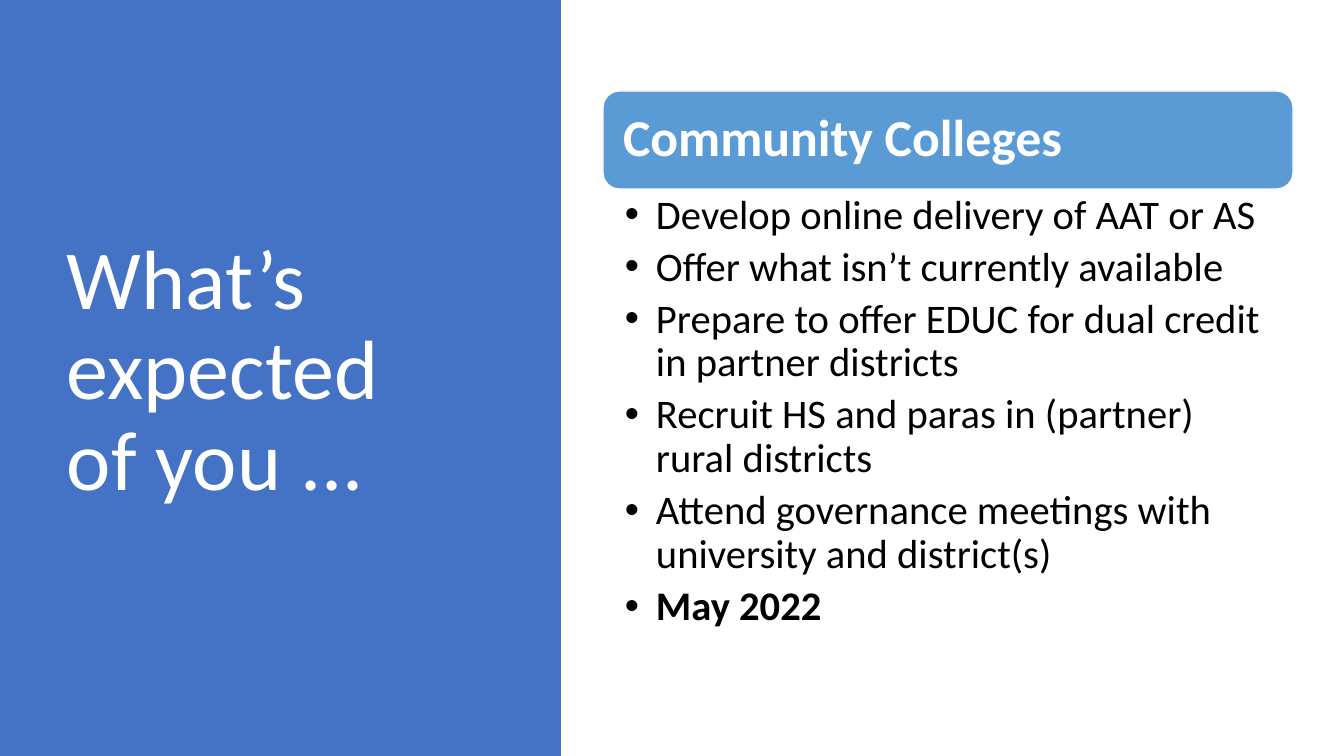
from lxml.etree import SubElement as Sub
from pptx import Presentation
from pptx.dml.color import RGBColor as Rgb
from pptx.enum.shapes import MSO_SHAPE as Kind
from pptx.enum.text import MSO_ANCHOR as Anchor
from pptx.oxml.ns import qn
from pptx.util import Emu, Pt

# Content
TITLE = "What’s expected of you ..."
HEAD = "Community Colleges"
TASKS = [
    "Develop online delivery of AAT or AS",
    "Offer what isn’t currently available",
    "Prepare to offer EDUC for dual credit in partner districts",
    "Recruit HS and paras in (partner) rural districts",
    "Attend governance meetings with university and district(s)",
]
DATE = "May 2022"

# Look
HUES = {"panel": "4472C4", "bar": "5B9BD5", "white": "FFFFFF", "black": "000000"}
FONTS = {
    "title": {"size": Pt(60), "name": "Calibri", "bold": False},
    "head": {"size": Pt(37), "name": "Calibri", "bold": True},
    "task": {"size": Pt(29), "name": "Calibri", "bold": False},
    "date": {"size": Pt(29), "name": "Calibri", "bold": True},
}

# Layout in px
WIDE, HIGH = 1344, 756
PANEL = (0, 0, 561, HIGH)
NAME = (57, 69, 419, 607)
LEFT, TOP, SPAN, BAR, LIST = 603, 91, 690, 98, 465
EDGE, HANG = 5, 31


def px(n):
    return Emu(round(n * 914400 / 100.8))


def hue(key):
    return Rgb.from_string(HUES[key])


def block(kind, box, fill, line=None):
    shape = slide.shapes.add_shape(kind, *map(px, box))
    shape.shadow.inherit = False
    shape.fill.solid()
    shape.fill.fore_color.rgb = hue(fill)
    if line:
        shape.line.color.rgb = hue(line)
        shape.line.width = Pt(1)
    else:
        shape.line.fill.background()


def write(box, rows, color, pads, anchor, after=0, bullet=False):
    frame = slide.shapes.add_textbox(*map(px, box)).text_frame
    frame.word_wrap = True
    frame.vertical_anchor = anchor
    for side, pad in zip(("left", "top", "right", "bottom"), pads):
        setattr(frame, f"margin_{side}", px(pad))
    for i, (text, style) in enumerate(rows):
        para = frame.add_paragraph() if i else frame.paragraphs[0]
        para.line_spacing = 0.9
        para.space_after = Pt(after)
        run = para.add_run()
        run.text = text
        for key, value in FONTS[style].items():
            setattr(run.font, key, value)
        run.font.color.rgb = hue(color)
        if bullet:
            props = para._p.get_or_add_pPr()
            props.set("marL", str(px(HANG)))
            props.set("indent", str(-px(HANG)))
            Sub(props, qn("a:buFont"), typeface="Arial")
            Sub(props, qn("a:buChar"), char="•")


deck = Presentation()
deck.slide_width, deck.slide_height = px(WIDE), px(HIGH)
slide = deck.slides.add_slide(deck.slide_layouts[6])

# Title panel
block(Kind.RECTANGLE, PANEL, "panel")
write(NAME, [(TITLE, "title")], "white", (10, 5, 10, 5), Anchor.MIDDLE)

# Heading bar
block(Kind.ROUNDED_RECTANGLE, (LEFT, TOP, SPAN, BAR), "bar", "white")
inner = (LEFT + EDGE, TOP + EDGE, SPAN - 2 * EDGE, BAR - 2 * EDGE)
write(inner, [(HEAD, "head")], "white", (15, 15, 15, 15), Anchor.MIDDLE)

# Task list
rows = [(task, "task") for task in TASKS] + [(DATE, "date")]
write((LEFT, TOP + BAR, SPAN, LIST), rows, "black", (22, 5, 29, 5),
      Anchor.TOP, after=5.8, bullet=True)

deck.save("out.pptx")
